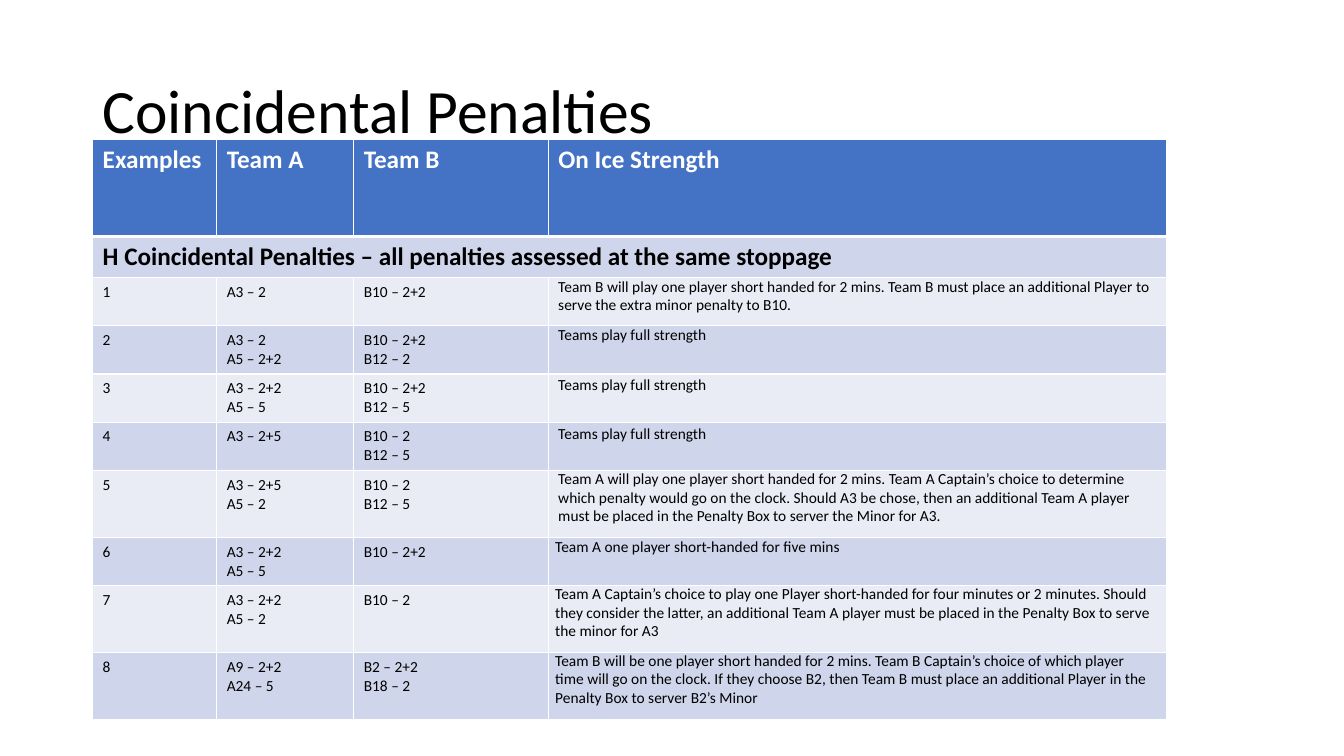
from dataclasses import dataclass

from lxml import etree
from pptx import Presentation
from pptx.dml.color import RGBColor
from pptx.enum.text import MSO_ANCHOR, MSO_AUTO_SIZE
from pptx.oxml.ns import qn
from pptx.util import Pt

MIDDLE = MSO_ANCHOR.MIDDLE
TOP = MSO_ANCHOR.TOP
GROW = MSO_AUTO_SIZE.SHAPE_TO_FIT_TEXT
FIXED = MSO_AUTO_SIZE.NONE
FONT = "Calibri"
BLACK, WHITE, BLUE = "000000", "FFFFFF", "4472C4"
BANDS = ("E9EBF5", "CFD5EA")
LEFT, CROWN = 66.2, 99.4
WIDTHS = (88.6, 97.9, 139, 441.4)
HEAD_H, RULE_H = 69.5, 29.5
SHORT, TALL = 34.4, 47.8
HEADS = ("Examples", "Team A", "Team B", "On Ice Strength")
RULE = "H Coincidental Penalties – all penalties assessed at the same stoppage"
FULL = "Teams play full strength"


@dataclass
class Case:
    home: list[str]
    away: list[str]
    note: str
    left: float
    top: float
    height: float = SHORT


CASES = [
    Case(["A3 – 2"], ["B10 – 2+2"],
         "Team B will play one player short handed for 2 mins. Team B must place "
         "an additional Player to serve the extra minor penalty to B10.",
         391.7, 194.4),
    Case(["A3 – 2", "A5 – 2+2"], ["B10 – 2+2", "B12 – 2"], FULL, 391.7, 228.4),
    Case(["A3 – 2+2", "A5 – 5"], ["B10 – 2+2", "B12 – 5"], FULL, 391.7, 264.4),
    Case(["A3 – 2+5"], ["B10 – 2", "B12 – 5"], FULL, 391.7, 299.4),
    Case(["A3 – 2+5", "A5 – 2"], ["B10 – 2", "B12 – 5"],
         "Team A will play one player short handed for 2 mins. Team A Captain’s "
         "choice to determine which penalty would go on the clock. Should A3 be "
         "chose, then an additional Team A player must be placed in the Penalty "
         "Box to server the Minor for A3.", 391.7, 331.9, TALL),
    Case(["A3 – 2+2", "A5 – 5"], ["B10 – 2+2"],
         "Team A one player short-handed for five mins", 389.5, 380.2),
    Case(["A3 – 2+2", "A5 – 2"], ["B10 – 2"],
         "Team A Captain’s choice to play one Player short-handed for four minutes "
         "or 2 minutes. Should they consider the latter, an additional Team A "
         "player must be placed in the Penalty Box to serve the minor for A3",
         389.5, 414, TALL),
    Case(["A9 – 2+2", "A24 – 5"], ["B2 – 2+2", "B18 – 2"],
         "Team B will be one player short handed for 2 mins. Team B Captain’s "
         "choice of which player time will go on the clock. If they choose B2, "
         "then Team B must place an additional Player in the Penalty Box to "
         "server B2’s Minor", 389.5, 461.5, TALL),
]


def color(code: str) -> RGBColor:
    return RGBColor.from_string(code)


def write(frame, lines: list[str], size: float, ink: str = BLACK,
          bold: bool = False) -> None:
    for i, line in enumerate(lines):
        para = frame.add_paragraph() if i else frame.paragraphs[0]
        run = para.add_run()
        run.text = line
        run.font.name = FONT
        run.font.size = Pt(size)
        run.font.bold = bold
        run.font.color.rgb = color(ink)


def add_box(slide, left: float, top: float, width: float, height: float,
            text: str, size: float):
    box = slide.shapes.add_textbox(Pt(left), Pt(top), Pt(width), Pt(height))
    frame = box.text_frame
    frame.word_wrap = True
    write(frame, [text], size)
    return frame


def edge(cell, side: str, width: float) -> None:
    line = etree.SubElement(cell._tc.get_or_add_tcPr(), qn(f"a:{side}"),
                            w=str(Pt(width)))
    fill = etree.SubElement(line, qn("a:solidFill"))
    etree.SubElement(fill, qn("a:srgbClr"), val=WHITE)


def paint(table, row: int, tint: str) -> None:
    for col in range(len(WIDTHS)):
        cell = table.cell(row, col)
        for side in ("lnL", "lnR", "lnT", "lnB"):
            thick = (row, side) in ((0, "lnB"), (1, "lnT"))
            edge(cell, side, 3 if thick else 1)
        cell.fill.solid()
        cell.fill.fore_color.rgb = color(tint)


def add_grid(slide) -> None:
    tall = [HEAD_H, RULE_H] + [case.height for case in CASES]
    table = slide.shapes.add_table(
        len(tall), len(WIDTHS), Pt(LEFT), Pt(CROWN),
        Pt(sum(WIDTHS)), Pt(sum(tall))).table
    table.first_row = False
    table.horz_banding = False
    for col, width in zip(table.columns, WIDTHS):
        col.width = Pt(width)
    for i, height in enumerate(tall):
        table.rows[i].height = Pt(height)
        paint(table, i, BANDS[i % 2] if i else BLUE)
    for i, head in enumerate(HEADS):
        write(table.cell(0, i).text_frame, [head], 18, WHITE, True)
    table.cell(1, 0).merge(table.cell(1, len(WIDTHS) - 1))
    write(table.cell(1, 0).text_frame, [RULE], 18, bold=True)
    for i, case in enumerate(CASES, 1):
        for col, lines in enumerate(([str(i)], case.home, case.away)):
            write(table.cell(i + 1, col).text_frame, lines, 11)


def main() -> None:
    deck = Presentation()
    deck.slide_width, deck.slide_height = Pt(960), Pt(540)
    slide = deck.slides.add_slide(deck.slide_layouts[6])
    title = add_box(slide, LEFT, 28.8, 828, 104.4, "Coincidental Penalties", 44)
    title.vertical_anchor = MIDDLE
    title.auto_size = FIXED
    title.paragraphs[0].line_spacing = 0.9
    add_grid(slide)
    for case in CASES:
        high = 20.6 if len(case.note) < 60 else case.height
        note = add_box(slide, case.left, case.top, WIDTHS[-1], high, case.note, 11)
        note.vertical_anchor = TOP
        note.auto_size = GROW
    deck.save("out.pptx")


if __name__ == "__main__":
    main()
